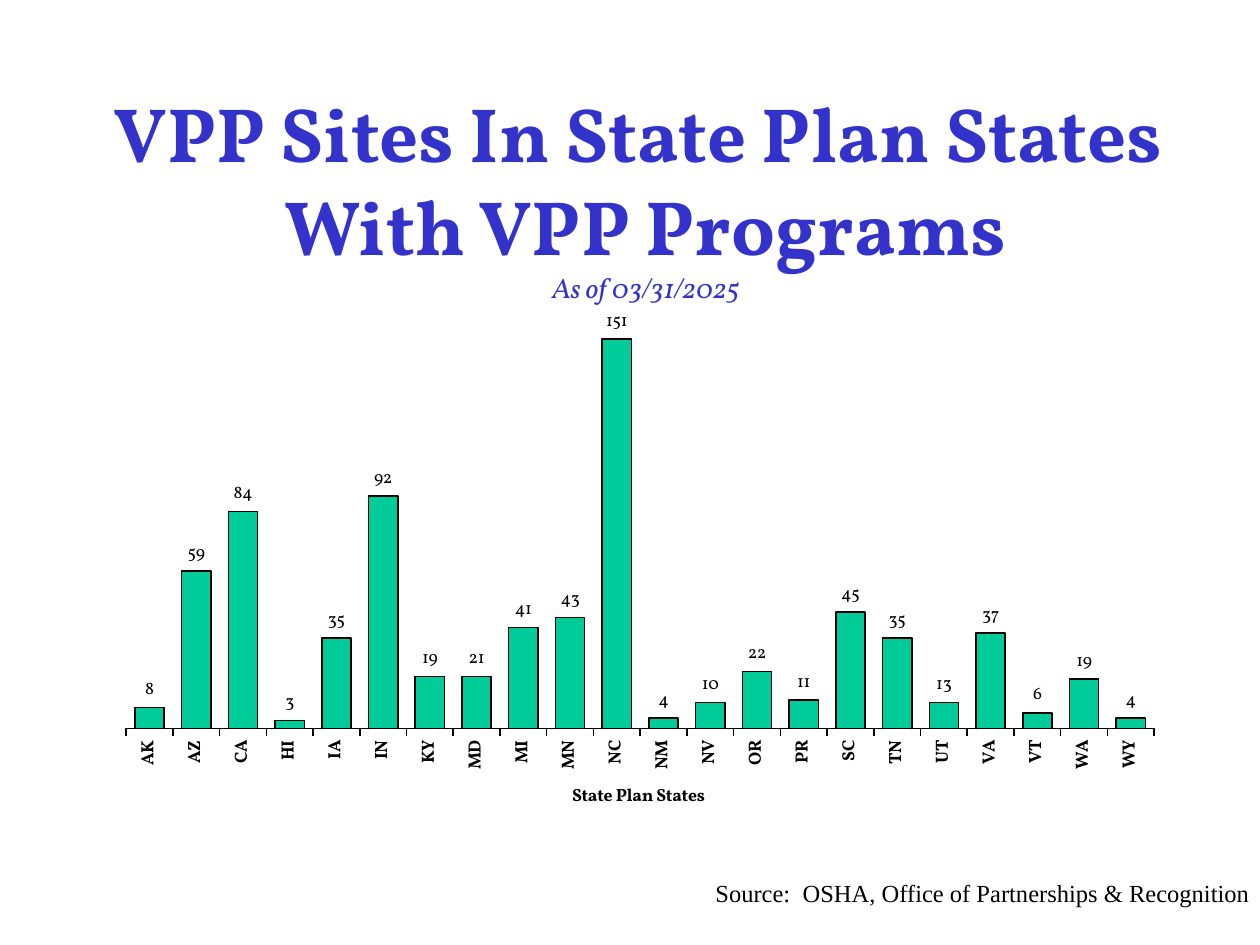
from lxml import etree
from pptx import Presentation
from pptx.chart.data import CategoryChartData
from pptx.dml.color import RGBColor
from pptx.enum.chart import XL_CHART_TYPE as CT, XL_LABEL_POSITION as LP
from pptx.enum.chart import XL_TICK_LABEL_POSITION as TL, XL_TICK_MARK as TM
from pptx.enum.text import MSO_ANCHOR as MA, PP_ALIGN as PA
from pptx.oxml.ns import qn
from pptx.util import Emu, Pt

PX = 914400 // 126
BLACK = "000000"
SITES = dict(AK=8, AZ=61, CA=84, HI=3, IA=35, IN=90, KY=20, MD=20, MI=39,
             MN=43, NC=151, NM=4, NV=10, OR=22, PR=11, SC=45, TN=35, UT=10,
             VA=37, VT=6, WA=19, WY=4)
LABELS = dict(AZ=59, IN=92, KY=19, MD=21, MI=41, UT=13)


def px(n):
    return Emu(n * PX)


def rgb(c):
    return RGBColor.from_string(c)


class Deck:
    face = "Vollkorn"
    bar = "00CC99"
    size = 10.1
    line_width = 0.88

    def __init__(self, w, h):
        self.prs = Presentation()
        self.prs.slide_width, self.prs.slide_height = px(w), px(h)
        self.s = self.prs.slides.add_slide(self.prs.slide_layouts[6])

    def font(self, f, size, color=BLACK, face=None, bold=False, italic=False):
        f.size, f.name, f.bold, f.italic = Pt(size), face or self.face, bold, italic
        f.color.rgb = rgb(color)

    def line(self, ln):
        ln.color.rgb = rgb(BLACK)
        ln.width = Pt(self.line_width)

    def text(self, box, lines, align, anchor=MA.TOP, bottom=0):
        tf = self.s.shapes.add_textbox(*map(px, box)).text_frame
        tf.word_wrap = True
        tf.vertical_anchor = anchor
        tf.margin_left = tf.margin_top = tf.margin_right = 0
        tf.margin_bottom = px(bottom)
        p = tf.paragraphs[0]
        p.alignment = align
        for i, (text, style) in enumerate(lines):
            if i:
                p.add_line_break()
            r = p.add_run()
            r.text = text
            self.font(r.font, **style)

    def column_chart(self, box, values, labels, title, top, plot):
        data = CategoryChartData()
        data.categories = list(values)
        data.add_series("Series 1", list(values.values()))
        chart = self.s.shapes.add_chart(
            CT.COLUMN_CLUSTERED, *map(px, box), data).chart
        chart.has_legend = chart.has_title = False
        self.font(chart.font, self.size, bold=True)
        self.columns(chart.plots[0], list(values), labels)
        self.axes(chart, title, top)
        self.inner_plot(chart, plot)

    def columns(self, plot, names, labels):
        plot.gap_width = 60
        plot.vary_by_categories = False
        ser = plot.series[0]
        ser.format.fill.solid()
        ser.format.fill.fore_color.rgb = rgb(self.bar)
        self.line(ser.format.line)
        dl = ser.data_labels
        dl.show_value = True
        dl.position = LP.OUTSIDE_END
        self.font(dl.font, self.size)
        for name, value in labels.items():
            label = ser.points[names.index(name)].data_label
            r = label.text_frame.paragraphs[0].add_run()
            r.text = str(value)
            self.font(r.font, self.size)
            label.position = LP.OUTSIDE_END

    def axes(self, chart, title, top):
        cat, val = chart.category_axis, chart.value_axis
        cat.tick_label_position = TL.LOW
        cat.major_tick_mark = TM.OUTSIDE
        self.line(cat.format.line)
        self.font(cat.tick_labels.font, self.size, bold=True)
        body = cat._element.find(qn("c:txPr")).find(qn("a:bodyPr"))
        body.set("rot", "-5400000")
        body.set("vert", "horz")
        r = cat.axis_title.text_frame.paragraphs[0].add_run()
        r.text = title
        self.font(r.font, self.size, bold=True)
        val.minimum_scale, val.maximum_scale = 0, top
        val.has_major_gridlines = False
        val.major_tick_mark = TM.NONE
        val.tick_label_position = TL.NONE
        val.format.line.fill.background()

    def inner_plot(self, chart, plot):
        area = chart._chartSpace.chart.plotArea
        for old in area.findall(qn("c:layout")):
            area.remove(old)
        layout = etree.Element(qn("c:layout"))
        area.insert(0, layout)
        manual = etree.SubElement(layout, qn("c:manualLayout"))
        parts = [("layoutTarget", "inner"), ("xMode", "edge"), ("yMode", "edge")]
        for tag, v in parts + list(zip("xywh", plot)):
            etree.SubElement(manual, qn("c:" + tag)).set("val", str(v))


def main():
    deck = Deck(1260, 945)
    heading = dict(size=44, color="3333CC", bold=True)
    date = dict(size=16, color="3333CC", italic=True)
    source = dict(size=14, face="Times New Roman")
    deck.text((84, 210, 1124, 147),
              [("VPP Sites In State Plan States ", heading),
               ("With VPP Programs", heading),
               ("As of 03/31/2025", date)],
              PA.CENTER, MA.BOTTOM, bottom=53)
    deck.column_chart((94, 305, 1071, 536), SITES, LABELS,
                      "State Plan States ", 160, (0.03, 0.02, 0.96, 0.77))
    deck.text((672, 878, 578, 64),
              [("Source:  OSHA, Office of Partnerships & Recognition", source)],
              PA.RIGHT)
    deck.prs.save("out.pptx")


if __name__ == "__main__":
    main()
